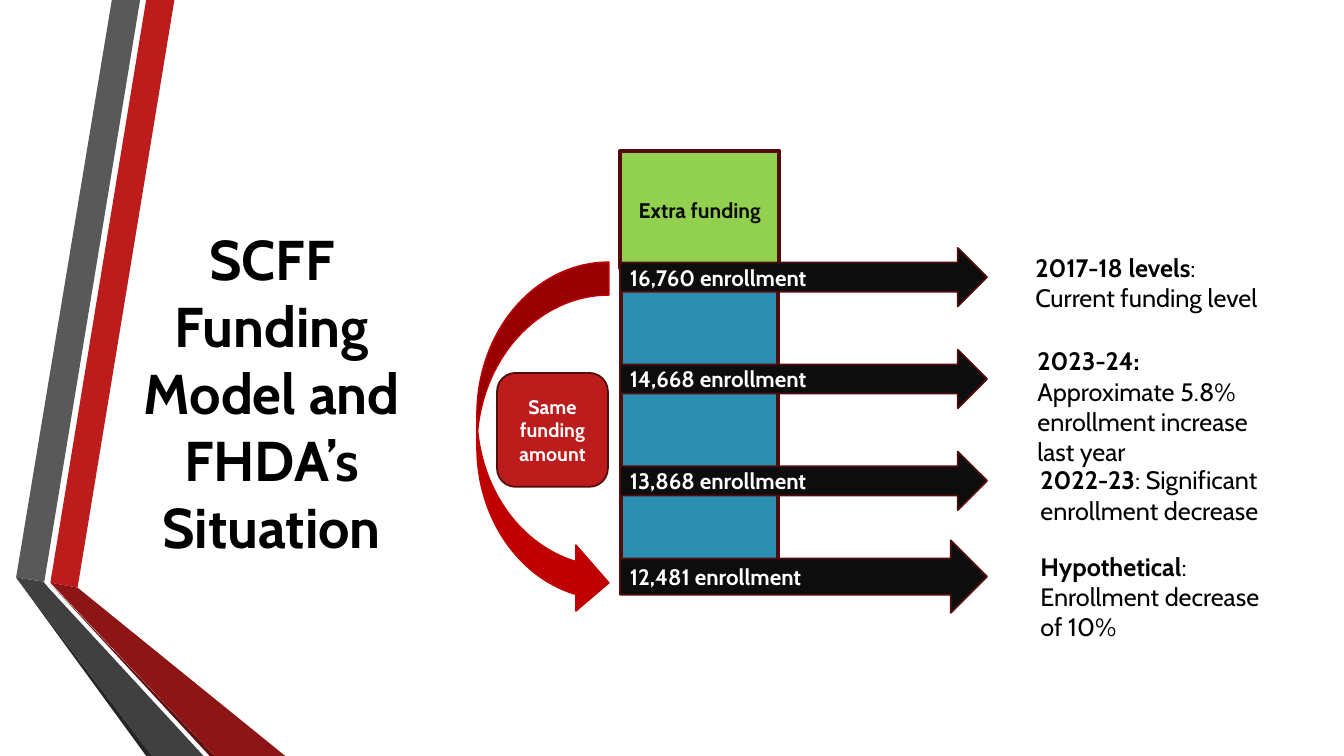
from pptx import Presentation
from pptx.dml.color import RGBColor
from pptx.enum import shapes, text
from pptx.util import Inches, Pt

FONT = "Cabin"
COLOURS = {
    "red": "BC1C1C", "red_fold": "8D1515", "red_edge": "5E0E0E",
    "grey": "595959", "grey_fold": "404040", "grey_edge": "262626",
    "outline": "520C0C", "blue": "2B8DB0", "green": "92D050",
    "near_black": "0D0D0D", "curve": "C00000",
    "black": "000000", "white": "FFFFFF",
}

# Folded ribbons, from back to front
RIBBONS = [
    ("red", [(0.5, 5.78), (0.77, 5.83), (1.73, 0), (1.45, 0)]),
    ("grey", [(1.39, 0), (1.11, 0), (0.16, 5.73), (0.44, 5.77)]),
    ("grey_edge", [(0.16, 5.73), (1.45, 7.5), (1.51, 7.5)]),
    ("red_edge", [(0.5, 5.79), (2.08, 7.5), (2.13, 7.5)]),
    ("red_fold", [(0.5, 5.78), (2.13, 7.5), (2.83, 7.5), (0.77, 5.83)]),
    ("grey_fold", [(2.02, 7.5), (0.48, 5.83), (0.43, 5.77), (0.16, 5.73), (1.51, 7.5)]),
]

# Enrollment arrows: label, top and height within the diagram
ARROWS = [(f"{count} enrollment", 0.96 + 1.01 * row, 0.58)
          for row, count in enumerate(["16,760", "14,668", "13,868"])]
ARROWS.append(("12,481 enrollment", 3.86, 0.72))

# Notes: box, bold lead, rest
NOTES = [
    ((10.17, 2.45, 2.58, 0.73), "2017-18 levels", ": Current funding level"),
    ((10.19, 3.38, 2.58, 1.01), "2023-24: ", "Approximate 5.8% enrollment increase last year"),
    ((10.22, 4.56, 2.58, 0.71), "2022-23", ": Significant enrollment decrease"),
    ((10.22, 5.42, 2.58, 1.01), "Hypothetical", ": Enrollment decrease of 10%"),
]


def rgb(name):
    return RGBColor.from_string(COLOURS[name])


def format_run(run, size, colour, bold=True):
    run.font.name = FONT
    run.font.size = Pt(size)
    run.font.bold = bold
    run.font.color.rgb = rgb(colour)


def write(frame, words, size, colour, align, space_after=6):
    frame.word_wrap = True
    frame.vertical_anchor = text.MSO_ANCHOR.MIDDLE
    paragraph = frame.paragraphs[0]
    paragraph.text = words
    paragraph.alignment = align
    paragraph.space_after = Pt(space_after)
    for run in paragraph.runs:
        format_run(run, size, colour)


def add_block(slide, kind, box, fill, line="outline", width=1.25):
    shape = slide.shapes.add_shape(kind, *map(Inches, box))
    shape.shadow.inherit = False
    shape.fill.solid()
    shape.fill.fore_color.rgb = rgb(fill)
    shape.line.color.rgb = rgb(line)
    shape.line.width = Pt(width)
    return shape


def add_ribbons(slide):
    for colour, points in RIBBONS:
        start, *rest = [(Inches(x), Inches(y)) for x, y in points]
        builder = slide.shapes.build_freeform(*start, scale=1.0)
        builder.add_line_segments(rest, close=True)
        shape = builder.convert_to_shape()
        shape.shadow.inherit = False
        shape.fill.solid()
        shape.fill.fore_color.rgb = rgb(colour)
        shape.line.fill.background()


def add_title(slide, box):
    title = slide.shapes.add_textbox(*map(Inches, box))
    write(title.text_frame, "SCFF Funding Model and FHDA’s\vSituation", 40, "black",
          text.PP_ALIGN.CENTER, space_after=0)


def add_funding_column(slide, left, top):
    kinds = shapes.MSO_SHAPE
    # Stacked column
    add_block(slide, kinds.RECTANGLE, (left + 0.01, top + 1.15, 1.56, 3.08), "blue", width=3)
    extra = add_block(slide, kinds.RECTANGLE, (left, top, 1.58, 1.16), "green", width=3)
    write(extra.text_frame, "Extra funding", 15.1, "near_black", text.PP_ALIGN.CENTER)
    # Enrollment levels
    for label, offset, height in ARROWS:
        arrow = add_block(slide, kinds.RIGHT_ARROW, (left, top + offset, 3.64, height),
                          "near_black")
        write(arrow.text_frame, label, 16, "white", text.PP_ALIGN.LEFT)


def add_same_funding(slide, left, top):
    kinds = shapes.MSO_SHAPE
    add_block(slide, kinds.CURVED_RIGHT_ARROW, (left, top, 1.31, 3.51), "curve", "curve", 1)
    label = add_block(slide, kinds.ROUNDED_RECTANGLE, (left + 0.2, top + 1.1, 1.1, 1.13), "red")
    write(label.text_frame, "Same funding amount", 14, "white", text.PP_ALIGN.CENTER)


def add_note(slide, box, lead, rest):
    note = slide.shapes.add_textbox(*map(Inches, box))
    frame = note.text_frame
    frame.word_wrap = True
    frame.auto_size = text.MSO_AUTO_SIZE.SHAPE_TO_FIT_TEXT
    paragraph = frame.paragraphs[0]
    paragraph.space_after = Pt(6)
    for words, bold in ((lead, True), (rest, False)):
        run = paragraph.add_run()
        run.text = words
        format_run(run, 18, "black", bold)


def main():
    presentation = Presentation()
    presentation.slide_width = Inches(13.33)
    presentation.slide_height = Inches(7.5)
    slide = presentation.slides.add_slide(presentation.slide_layouts[6])
    add_ribbons(slide)
    add_title(slide, (1.25, 1.1, 2.89, 5.58))
    add_funding_column(slide, 6.15, 1.5)
    add_same_funding(slide, 4.73, 2.6)
    for note in NOTES:
        add_note(slide, *note)
    presentation.save("out.pptx")


if __name__ == "__main__":
    main()
